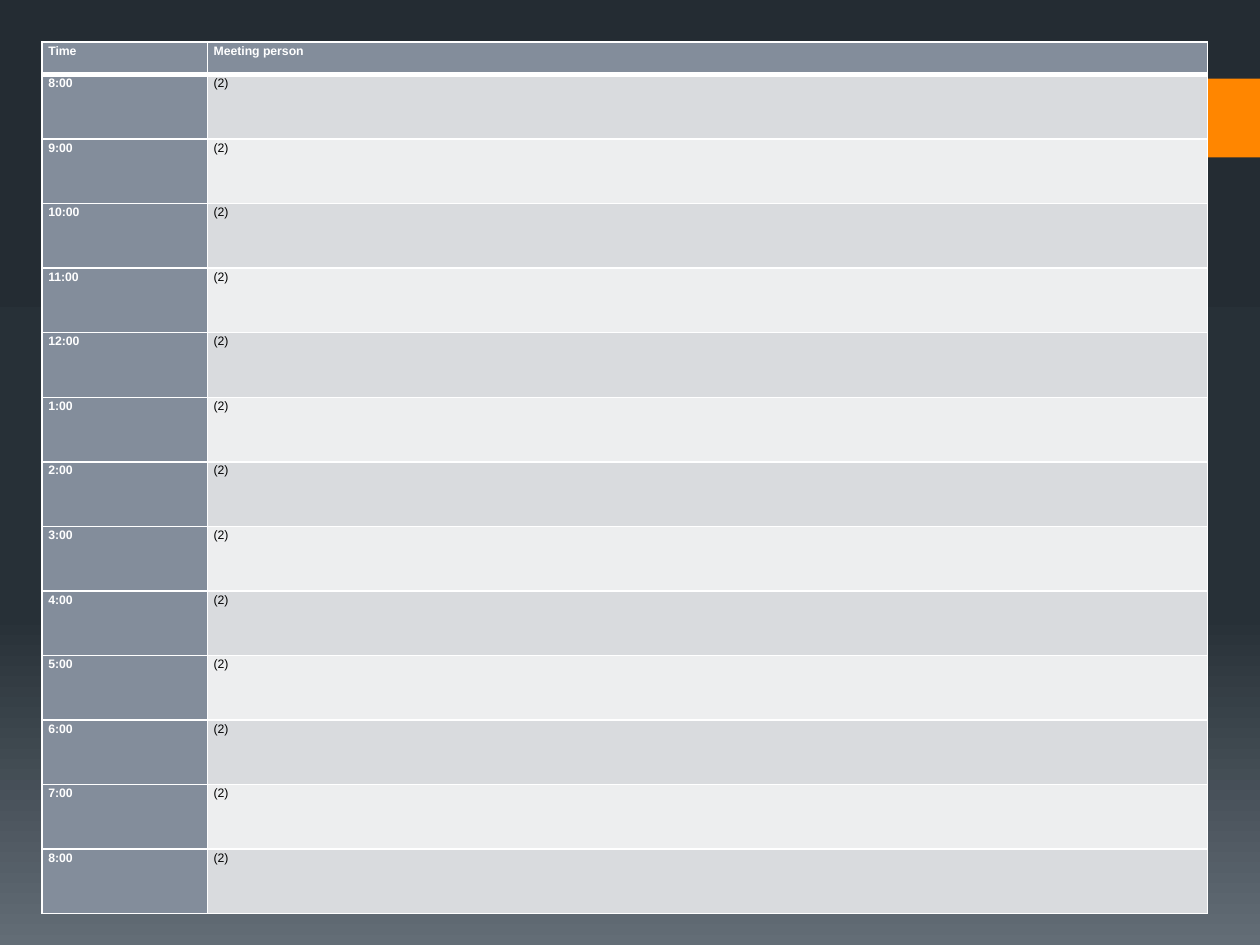
from copy import deepcopy
from dataclasses import dataclass

from lxml import etree
from pptx import Presentation
from pptx.dml.color import RGBColor
from pptx.enum.shapes import MSO_SHAPE
from pptx.oxml.ns import qn
from pptx.util import Pt

RECTANGLE = MSO_SHAPE.RECTANGLE
BLANK_LAYOUT = 6


@dataclass(frozen=True)
class Theme:
    font: str = "Arial"
    text_size: float = 7
    line_spacing: float = 1.15
    backdrop: tuple = ((0, "242C33"), (0.65, "273037"), (1, "636D76"))
    accent: str = "FF8600"
    heading: str = "838D9B"
    bands: tuple = ("D9DBDE", "EDEEEF")
    light_text: str = "FFFFFF"
    dark_text: str = "000000"
    border: str = "FFFFFF"
    thin: float = 1
    thick: float = 3


THEME = Theme()
HEADINGS = ("Time", "Meeting person")
HOURS = [*range(8, 13), *range(1, 9)]
ENTRY = "(2)"


def paint_background(page):
    fill = page.background.fill
    fill.gradient()
    fill.gradient_angle = 270
    stop_list = page.element.find(".//" + qn("a:gsLst"))
    stop_list.append(deepcopy(stop_list[-1]))
    for stop, (position, color) in zip(fill.gradient_stops, THEME.backdrop):
        stop.position = position
        stop.color.rgb = RGBColor.from_string(color)


def add_accent_tab(page, left, top, width, height):
    """Place a narrow bar and a square, a gap apart, within the box."""
    bar_width = 6.5
    for x, part_width in ((left, bar_width), (left + width - height, height)):
        block = page.shapes.add_shape(RECTANGLE, Pt(x), Pt(top), Pt(part_width), Pt(height))
        block.shadow.inherit = False
        block.fill.solid()
        block.fill.fore_color.rgb = RGBColor.from_string(THEME.accent)
        block.line.fill.background()


def set_borders(cell, top, bottom):
    """Draw all four edges, with the given top and bottom widths in points."""
    properties = cell._tc.get_or_add_tcPr()
    edges = (("lnL", THEME.thin), ("lnR", THEME.thin), ("lnT", top), ("lnB", bottom))
    for index, (tag, width) in enumerate(edges):
        line = etree.Element(qn(f"a:{tag}"), w=str(Pt(width)))
        solid = etree.SubElement(line, qn("a:solidFill"))
        etree.SubElement(solid, qn("a:srgbClr"), val=THEME.border)
        properties.insert(index, line)


def format_cell(cell, text, fill, color, bold):
    cell.margin_left = cell.margin_right = Pt(3.6)
    cell.margin_top = cell.margin_bottom = Pt(0)
    cell.fill.solid()
    cell.fill.fore_color.rgb = RGBColor.from_string(fill)
    cell.text_frame.text = text
    para = cell.text_frame.paragraphs[0]
    para.line_spacing = THEME.line_spacing
    font = para.runs[0].font
    font.name = THEME.font
    font.size = Pt(THEME.text_size)
    font.bold = bold
    font.color.rgb = RGBColor.from_string(color)


def add_schedule(page, left, top, width, height):
    rows = [HEADINGS] + [(f"{hour}:00", ENTRY) for hour in HOURS]
    time_width, header_height = 94.5, 18.6
    hour_height = (height - header_height) / len(HOURS)
    frame = page.shapes.add_table(len(rows), len(HEADINGS), Pt(left), Pt(top), Pt(width), Pt(height))
    table = frame.table
    table.first_row = table.horz_banding = False
    table.columns[0].width = Pt(time_width)
    table.columns[1].width = Pt(width - time_width)

    for row, texts in enumerate(rows):
        table.rows[row].height = Pt(hour_height if row else header_height)
        for column, text in enumerate(texts):
            cell = table.cell(row, column)
            if row == 0 or column == 0:
                format_cell(cell, text, THEME.heading, THEME.light_text, True)
            else:
                band = THEME.bands[(row - 1) % 2]
                format_cell(cell, text, band, THEME.dark_text, False)
            set_borders(
                cell,
                top=THEME.thick if row == 1 else THEME.thin,
                bottom=THEME.thick if row == 0 else THEME.thin,
            )


def main():
    deck = Presentation()
    deck.slide_width, deck.slide_height = Pt(720), Pt(540)
    page = deck.slides.add_slide(deck.slide_layouts[BLANK_LAYOUT])
    paint_background(page)
    add_accent_tab(page, 664, 45, 56, 45)
    add_schedule(page, 24, 24, 666, 498.3)
    deck.save("out.pptx")


if __name__ == "__main__":
    main()
